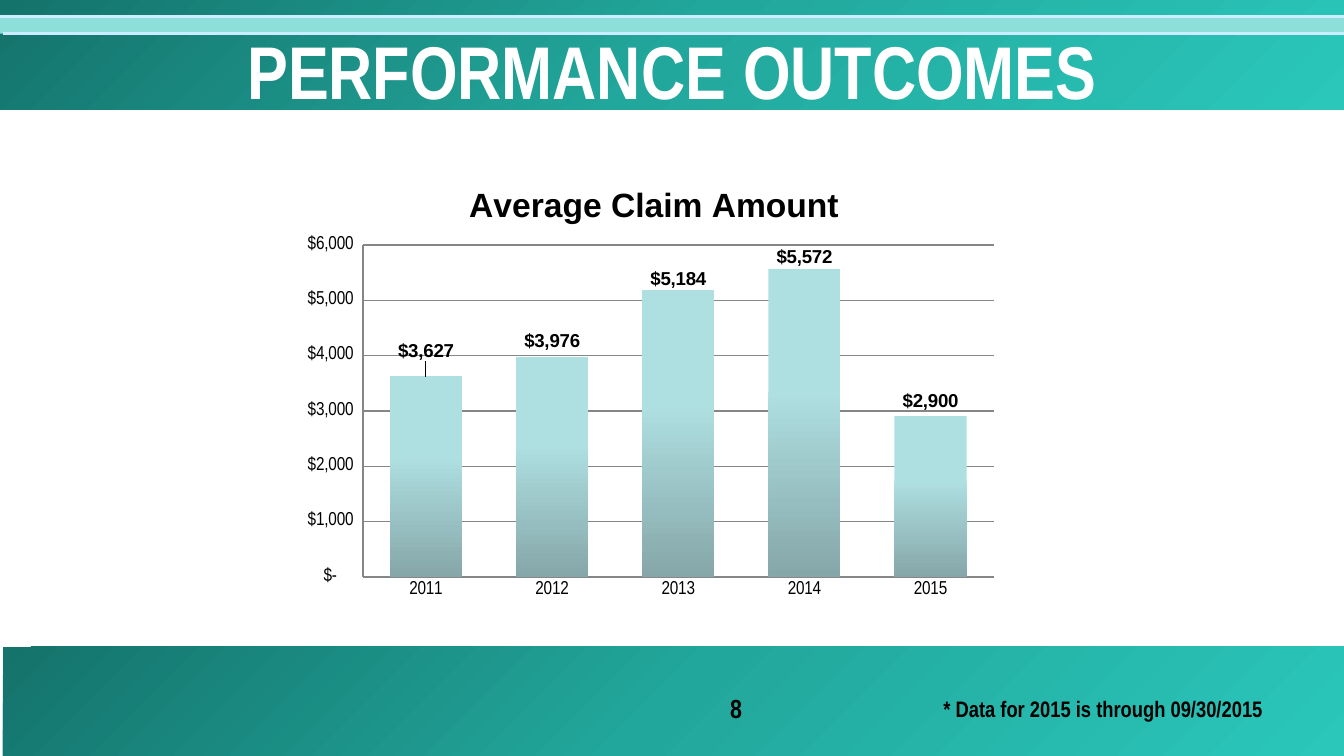
from copy import deepcopy

from lxml import etree
from pptx import Presentation
from pptx.chart.data import CategoryChartData
from pptx.dml.color import RGBColor
from pptx.enum.chart import XL_CHART_TYPE, XL_LABEL_POSITION, XL_TICK_MARK
from pptx.enum.shapes import MSO_CONNECTOR, MSO_SHAPE
from pptx.enum.text import MSO_ANCHOR, PP_ALIGN
from pptx.oxml.ns import qn
from pptx.util import Emu, Pt

COLUMNS = XL_CHART_TYPE.COLUMN_CLUSTERED
OUTSIDE_END = XL_LABEL_POSITION.OUTSIDE_END
NO_TICK = XL_TICK_MARK.NONE
STRAIGHT = MSO_CONNECTOR.STRAIGHT
RECTANGLE = MSO_SHAPE.RECTANGLE
MIDDLE = MSO_ANCHOR.MIDDLE
TOP = MSO_ANCHOR.TOP
LEFT = PP_ALIGN.LEFT
CENTER = PP_ALIGN.CENTER

WIDTH, HEIGHT = 960, 540
BAND_HEIGHT = 78
BAND_STOPS = [(0, "14736B"), (50, "22A79C"), (100, "2BC7BB")]
COLUMN_STOPS = [(0, "AEDFE1"), (40, "AEDFE1"), (100, "86A7A9")]
AXIS_FORMAT = '_("$"* #,##0_);_("$"* \\(#,##0\\);_("$"* "-"??_);_(@_)'
LABEL_FORMAT = '"$"#,##0'
CLAIMS = {"2011": 3627, "2012": 3976, "2013": 5184, "2014": 5572, "2015": 2900}
LABEL_SHIFTS = {0: -0.02, 2: 0.01, 3: 0.01}


def px(length):
    return Emu(length * 9525)


def color(value):
    return RGBColor.from_string(value)


def chart_layout(**settings):
    layout = etree.Element(qn("c:layout"))
    manual = etree.SubElement(layout, qn("c:manualLayout"))
    for name, value in settings.items():
        etree.SubElement(manual, qn(f"c:{name}")).set("val", str(value))
    return layout


class SlideBuilder:
    heading_font = "Arial"
    body_font = "Arial Narrow"
    text_color = "000000"
    grid_color = "868686"
    rule_color = "CCECFF"

    def __init__(self, slide):
        self.slide = slide

    def style(self, font, size, bold=False, name=None, font_color=None):
        font.name = name or self.body_font
        font.size = Pt(size)
        font.bold = bold
        font.color.rgb = color(font_color or self.text_color)

    def gradient(self, fill, stops, angle):
        fill.gradient()
        fill.gradient_angle = angle
        stop_list = fill.gradient_stops
        first = stop_list[0].color
        first.rgb = color(stops[0][1])
        element = fill._fill._gradFill.gsLst
        for extra in range(len(stops) - len(stop_list)):
            element.append(deepcopy(element[0]))
        for stop, (position, value) in zip(fill.gradient_stops, stops):
            stop.position = position / 100
            stop.color.rgb = color(value)

    def bar(self, left, top, width, height, fill_color=None):
        shape = self.slide.shapes.add_shape(
            RECTANGLE, px(left), px(top), px(width), px(height))
        shape.shadow.inherit = False
        shape.line.fill.background()
        if fill_color:
            shape.fill.solid()
            shape.fill.fore_color.rgb = color(fill_color)
        else:
            self.gradient(shape.fill, BAND_STOPS, 315)

    def rule(self, left, top):
        line = self.slide.shapes.add_connector(
            STRAIGHT, px(left), px(top), px(WIDTH), px(top))
        line.line.color.rgb = color(self.rule_color)
        line.line.width = Pt(1.5)
        etree.SubElement(line._element.spPr, qn("a:effectLst"))

    def text(self, left, top, width, height, content, size,
             alignment=CENTER, anchor=TOP, font_color=None):
        shape = self.slide.shapes.add_textbox(
            px(left), px(top), px(width), px(height))
        text_frame = shape.text_frame
        text_frame.word_wrap = True
        text_frame.vertical_anchor = anchor
        text_frame.text = content
        paragraph = text_frame.paragraphs[0]
        paragraph.alignment = alignment
        self.style(paragraph.runs[0].font, size, True, font_color=font_color)

    def column_chart(self, left, top, width, height, title, values):
        data = CategoryChartData(number_format=LABEL_FORMAT)
        data.categories = list(values)
        data.add_series(title, list(values.values()))
        chart = self.slide.shapes.add_chart(
            COLUMNS, px(left), px(top), px(width), px(height), data).chart
        self.style(chart.font, 10)
        chart.has_legend = False
        self.chart_title(chart, title)
        self.axes(chart)
        plot = chart.plots[0]
        plot.gap_width = 75
        plot.overlap = -25
        plot.vary_by_categories = False
        series = plot.series[0]
        series.invert_if_negative = False
        self.gradient(series.format.fill, COLUMN_STOPS, 270)
        self.value_labels(series)

    def chart_title(self, chart, title):
        chart.has_title = True
        text_frame = chart.chart_title.text_frame
        text_frame.text = title
        self.style(text_frame.paragraphs[0].runs[0].font, 18, True, self.heading_font)
        title_element = chart.chart_title._element
        for old in title_element.findall(qn("c:layout")):
            title_element.remove(old)
        title_element.find(qn("c:tx")).addnext(
            chart_layout(xMode="edge", yMode="edge", x=0.24, y=0.05))
        plot_area = chart._chartSpace.chart.plotArea
        for old in plot_area.findall(qn("c:layout")):
            plot_area.remove(old)
        plot_area.insert(0, chart_layout(
            layoutTarget="inner", xMode="edge", yMode="edge",
            x=0.1, y=0.2, w=0.88, h=0.73))

    def axes(self, chart):
        value_axis = chart.value_axis
        value_axis.minimum_scale = 0
        value_axis.maximum_scale = 6000
        value_axis.major_unit = 1000
        value_axis.has_major_gridlines = True
        value_axis.tick_labels.number_format = AXIS_FORMAT
        value_axis.tick_labels.number_format_is_linked = False
        for axis in (value_axis, chart.category_axis):
            axis.major_tick_mark = NO_TICK
            axis.minor_tick_mark = NO_TICK
            self.style(axis.tick_labels.font, 10)
        for part in (value_axis, chart.category_axis, value_axis.major_gridlines):
            part.format.line.color.rgb = color(self.grid_color)
            part.format.line.width = Pt(0.75)

    def value_labels(self, series):
        labels = series.data_labels
        labels.show_value = True
        labels.position = OUTSIDE_END
        labels.number_format = LABEL_FORMAT
        labels.number_format_is_linked = False
        self.style(labels.font, 10, True, self.heading_font)
        for index, shift in LABEL_SHIFTS.items():
            label = series.points[index].data_label
            self.style(label.font, 10, True, self.heading_font)
            label.position = OUTSIDE_END
            element = label._dLbl
            element.insert(1, chart_layout(x=0, y=shift))
            number_format = etree.Element(qn("c:numFmt"))
            number_format.set("formatCode", LABEL_FORMAT)
            number_format.set("sourceLinked", "0")
            element.insert(2, number_format)


def main():
    presentation = Presentation()
    presentation.slide_width = px(WIDTH)
    presentation.slide_height = px(HEIGHT)
    builder = SlideBuilder(presentation.slides.add_slide(presentation.slide_layouts[6]))
    builder.bar(2, HEIGHT - BAND_HEIGHT, WIDTH - 2, BAND_HEIGHT)
    builder.bar(0, 0, WIDTH, BAND_HEIGHT)
    builder.bar(0, 12, WIDTH, 12, "8DDFD9")
    builder.rule(0, 12)
    builder.rule(2, 24)
    builder.text(0, 22, WIDTH, 56, "PERFORMANCE OUTCOMES", 40,
                 anchor=MIDDLE, font_color="FFFFFF")
    builder.column_chart(208, 110, 512, 325, "Average Claim Amount", CLAIMS)
    builder.text(640, 492, 296, 29, "* Data for 2015 is through 09/30/2015", 12)
    builder.text(512, 490, 28, 33, "8", 14, alignment=LEFT)
    presentation.save("out.pptx")


if __name__ == "__main__":
    main()
